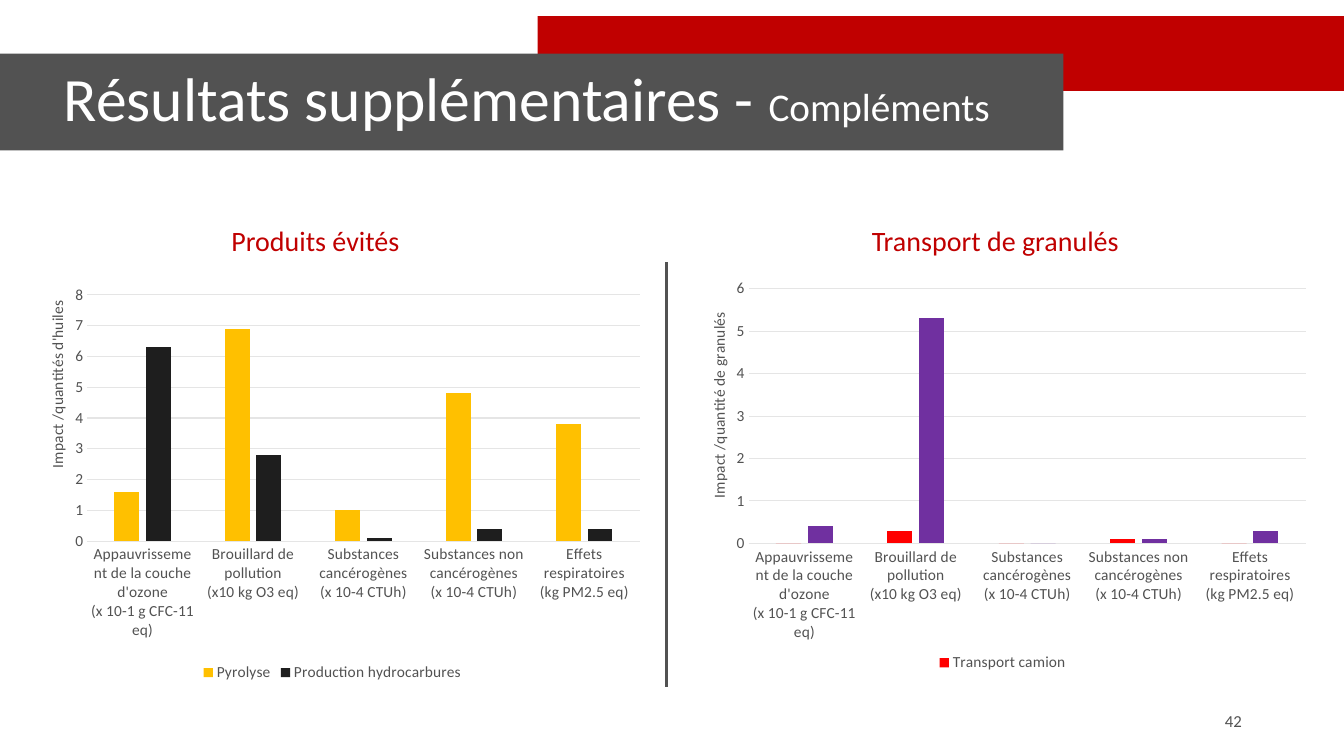
from lxml import etree
from pptx import Presentation
from pptx.chart.data import CategoryChartData
from pptx.dml.color import RGBColor
from pptx.enum.chart import XL_CHART_TYPE, XL_LEGEND_POSITION, XL_TICK_MARK
from pptx.enum.shapes import MSO_CONNECTOR, MSO_SHAPE
from pptx.enum.text import MSO_ANCHOR, MSO_AUTO_SIZE, PP_ALIGN
from pptx.oxml import parse_xml
from pptx.oxml.ns import nsdecls, qn
from pptx.util import Cm, Pt

COLUMNS = XL_CHART_TYPE.COLUMN_CLUSTERED
BOTTOM = XL_LEGEND_POSITION.BOTTOM
NO_TICK = XL_TICK_MARK.NONE
RECTANGLE = MSO_SHAPE.RECTANGLE
STRAIGHT = MSO_CONNECTOR.STRAIGHT
MIDDLE = MSO_ANCHOR.MIDDLE
CENTER, RIGHT = PP_ALIGN.CENTER, PP_ALIGN.RIGHT

FONT = "Calibri"
RED, GREY, WHITE, PALE = "C00000", "525252", "FFFFFF", "E5E5E5"
rgb = RGBColor.from_string


def write(paragraph, text, size, color, align=None, line_spacing=None):
    run = paragraph.add_run()
    run.text = text
    run.font.name = FONT
    run.font.size = Pt(size)
    run.font.bold = False
    run.font.color.rgb = rgb(color)
    if align is not None:
        paragraph.alignment = align
    if line_spacing is not None:
        paragraph.line_spacing = line_spacing


def set_layout(parent, index, **settings):
    """Give a chart part a manual layout, as fractions of the chart area."""
    for layout in parent.findall(qn("c:layout")):
        parent.remove(layout)
    layout = etree.Element(qn("c:layout"))
    manual = etree.SubElement(layout, qn("c:manualLayout"))
    for tag, value in settings.items():
        etree.SubElement(manual, qn(f"c:{tag}")).set("val", str(value))
    parent.insert(index, layout)


prs = Presentation()
prs.slide_width, prs.slide_height = Cm(33.87), Cm(19.05)
slide = prs.slides.add_slide(prs.slide_layouts[5])
shapes = slide.shapes

# Title over its two bands
title = shapes.title
for left, top, width, height, color in (
    (13.55, 0.41, 20.32, 1.88, RED),
    (0, 1.35, 26.8, 2.44, GREY),
):
    band = shapes.add_shape(RECTANGLE, Cm(left), Cm(top), Cm(width), Cm(height))
    band.shadow.inherit = False
    band.fill.solid()
    band.fill.fore_color.rgb = rgb(color)
    band.line.fill.background()
    title.element.addprevious(band.element)

title.left, title.top, title.width, title.height = Cm(1.35), Cm(0.89), Cm(25.48), Cm(3.35)
title.text_frame.auto_size = MSO_AUTO_SIZE.NONE
title.text_frame.vertical_anchor = MIDDLE
heading = title.text_frame.paragraphs[0]
write(heading, "Résultats supplémentaires - ", 44, WHITE, PP_ALIGN.LEFT, 0.9)
write(heading, "Compléments", 28, WHITE)

# Page number
page_number = shapes.add_textbox(Cm(23.93), Cm(17.65), Cm(7.62), Cm(1.02)).text_frame
page_number.word_wrap = True
page_number.vertical_anchor = MIDDLE
write(page_number.paragraphs[0], "42", 12, GREY, RIGHT)

# Divider between the two halves
divider = shapes.add_connector(STRAIGHT, Cm(16.79), Cm(17.3), Cm(16.79), Cm(6.6))
divider.line.color.rgb = rgb(GREY)
divider.line.width = Pt(2.25)
etree.SubElement(divider.element.spPr, qn("a:effectLst"))

# Each half: a heading above a column chart
impacts = (
    "Appauvrissement de la couche d'ozone\n(x 10-1 g CFC-11 eq)",
    "Brouillard de pollution\n(x10 kg O3 eq)",
    "Substances cancérogènes\n(x 10-4 CTUh)",
    "Substances non cancérogènes\n(x 10-4 CTUh)",
    "Effets respiratoires\n(kg PM2.5 eq)",
)
halves = (
    {
        "heading": "Produits évités", "heading_left": 4.98, "heading_width": 5.94,
        "chart_box": (0.64, 6.88, 15.49, 10.41),
        "axis": "Impact /quantités d'huiles", "axis_at": (0.03, 0.06), "maximum": 8,
        "plot": (0.101, 0.053, 0.899, 0.596),
        "series": (
            ("Pyrolyse", (1.6, 6.9, 1, 4.8, 3.8), "FFC000"),
            ("Production hydrocarbures", (6.3, 2.8, 0.1, 0.4, 0.4), "1E1E1E"),
        ),
        "unlisted": (),
    },
    {
        "heading": "Transport de granulés", "heading_left": 20.93, "heading_width": 8.31,
        "chart_box": (17.63, 6.88, 15.29, 10.16),
        "axis": "Impact /quantité de granulés", "axis_at": (0.01, 0.09), "maximum": 6,
        "plot": (0.081, 0.039, 0.919, 0.632),
        "series": (
            ("Transport camion", (0, 0.3, 0, 0.1, 0), "FF0000"),
            ("Transport bateau", (0.4, 5.3, 0, 0.1, 0.3), "7030A0"),
        ),
        "unlisted": (1,),
    },
)

for half in halves:
    caption = shapes.add_textbox(
        Cm(half["heading_left"]), Cm(5.61), Cm(half["heading_width"]), Cm(1.27)
    ).text_frame
    caption.word_wrap = True
    write(caption.paragraphs[0], half["heading"], 20, RED, CENTER, 0.9)

    data = CategoryChartData()
    data.categories = impacts
    for name, values, _ in half["series"]:
        data.add_series(name, values)
    chart = shapes.add_chart(COLUMNS, *map(Cm, half["chart_box"]), data).chart
    chart.has_title = False
    chart.font.name = FONT
    chart.font.size = Pt(11)
    chart.font.color.rgb = rgb(GREY)
    chart.element.find(qn("c:txPr")).addprevious(parse_xml(
        f'<c:spPr {nsdecls("c", "a")}><a:solidFill><a:srgbClr val="{WHITE}"/></a:solidFill>'
        "<a:ln><a:noFill/></a:ln></c:spPr>"
    ))

    plot = chart.plots[0]
    plot.vary_by_categories = False
    plot.gap_width, plot.overlap = 219, -27
    for series, (_, _, color) in zip(plot.series, half["series"]):
        series.format.fill.solid()
        series.format.fill.fore_color.rgb = rgb(color)
    x, y, w, h = half["plot"]
    set_layout(chart.element.find(f'.//{qn("c:plotArea")}'), 0, layoutTarget="inner",
               xMode="edge", yMode="edge", x=x, y=y, w=w, h=h)

    category_axis, value_axis = chart.category_axis, chart.value_axis
    for axis in (category_axis, value_axis):
        axis.major_tick_mark = axis.minor_tick_mark = NO_TICK
    value_axis.minimum_scale, value_axis.maximum_scale = 0, half["maximum"]
    value_axis.major_unit = 1
    value_axis.format.line.fill.background()
    value_axis.has_major_gridlines = True
    for rule in (category_axis.format.line, value_axis.major_gridlines.format.line):
        rule.color.rgb = rgb(PALE)
        rule.width = Pt(0.75)

    axis_title = value_axis.axis_title
    write(axis_title.text_frame.paragraphs[0], half["axis"], 11, GREY)
    title_xml = chart.element.find(f'.//{qn("c:valAx")}/{qn("c:title")}')
    title_xml.find(f'.//{qn("a:bodyPr")}').set("rot", "-5400000")
    x, y = half["axis_at"]
    set_layout(title_xml, 1, xMode="edge", yMode="edge", x=x, y=y)

    chart.has_legend = True
    chart.legend.position = BOTTOM
    chart.legend.include_in_layout = False
    legend_position = chart.element.find(f'.//{qn("c:legendPos")}')
    for index in half["unlisted"]:
        legend_position.addnext(parse_xml(
            f'<c:legendEntry {nsdecls("c")}><c:idx val="{index}"/><c:delete val="1"/></c:legendEntry>'
        ))

prs.save("out.pptx")
